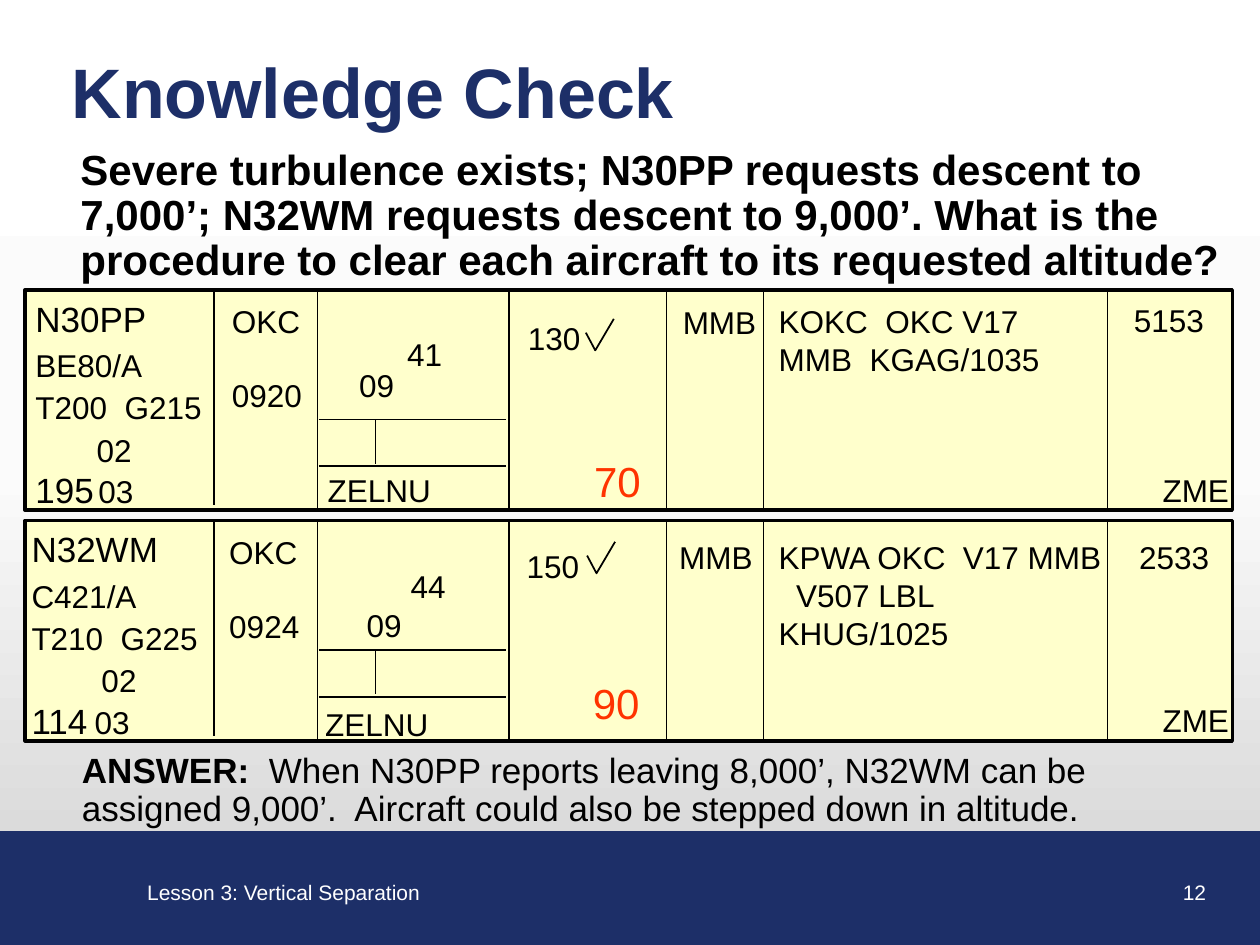
"""Build the Knowledge Check slide with two flight progress strips."""
from copy import deepcopy
from dataclasses import dataclass
from typing import NamedTuple

from lxml import etree
from pptx import Presentation
from pptx.dml.color import RGBColor
from pptx.enum import text as t
from pptx.enum.shapes import MSO_CONNECTOR, MSO_SHAPE
from pptx.oxml import ns
from pptx.util import Pt

NAVY = RGBColor(0x1D, 0x2F, 0x68)
WHITE = RGBColor(0xFF, 0xFF, 0xFF)
BLACK = RGBColor(0, 0, 0)
STRIP_YELLOW = RGBColor(0xFF, 0xFF, 0xCC)
ALTITUDE_RED = RGBColor(0xFF, 0x33, 0x00)
BACKDROP = ((0, WHITE), (0.5, RGBColor(0xFB, 0xFB, 0xFB)), (1, RGBColor(0xD0, 0xD0, 0xD0)))

LEFT, CENTER, RIGHT = t.PP_ALIGN.LEFT, t.PP_ALIGN.CENTER, t.PP_ALIGN.RIGHT
STRIP_LEFT, STRIP_WIDTH, STRIP_HEIGHT = 14.4, 689.8, 126
STRIP_RULES = (
    (122.4, 0, 122.4, 123),
    *((x, 0, x, 125) for x in (181.4, 290.9, 380.9, 436.3, 632.9)),
    (182.2, 74.2, 289.4, 74.2),
    (182.2, 100.8, 289.4, 100.8),
    (214.6, 74.2, 214.6, 99.4),
)
CHECK_MARK = ((0, 7.9), (5.4, 18), (16, 0))


class Run(NamedTuple):
    text: str
    size: float | None = None
    bold: bool | None = None


class Line(NamedTuple):
    runs: tuple[Run, ...]
    before: float = 0
    indent: float = 0
    tab: float = 0


@dataclass(frozen=True)
class Field:
    lines: tuple[Line, ...]
    left: float
    down: float
    width: float
    height: float = 28.8
    size: float = 18
    color: RGBColor = BLACK
    align: t.PP_ALIGN = LEFT


@dataclass(frozen=True)
class Strip:
    top: float
    check: tuple[float, float]
    fields: tuple[Field, ...]


def line(text: str, before: float = 0, indent: float = 0) -> Line:
    return Line((Run(text),), before, indent)


def aircraft(callsign, kind, speeds, sector, number, strip_no, indent, tab) -> tuple[Line, ...]:
    return (
        Line((Run(callsign, 20),)),
        line(kind, 4),
        line(speeds, 2.5),
        line(sector, 2.5, indent),
        Line((Run(number, 20), Run("\t" + strip_no)), tab=tab),
    )


def departure(fix: str, time: str) -> tuple[Line, ...]:
    return line(fix), line(time, 20.7)


def write(shape, lines, *, size=18, color=BLACK, bold=False, align=LEFT,
          inset=(7.2, 3.6), spacing=1.0, wrap=True, anchor=t.MSO_ANCHOR.TOP) -> None:
    frame = shape.text_frame
    frame.word_wrap = wrap
    frame.auto_size = t.MSO_AUTO_SIZE.NONE
    frame.vertical_anchor = anchor
    frame.margin_left = frame.margin_right = Pt(inset[0])
    frame.margin_top = frame.margin_bottom = Pt(inset[1])
    for index, item in enumerate(lines):
        paragraph = frame.paragraphs[0] if index == 0 else frame.add_paragraph()
        properties = paragraph._p.get_or_add_pPr()
        properties.set("marL", str(Pt(item.indent)))
        properties.set("indent", "0")
        etree.SubElement(properties, ns.qn("a:buNone"))
        if item.tab:
            stops = etree.SubElement(properties, ns.qn("a:tabLst"))
            etree.SubElement(stops, ns.qn("a:tab"), pos=str(Pt(item.tab)), algn="l")
        paragraph.alignment = align
        paragraph.line_spacing = spacing
        paragraph.space_before = Pt(item.before)
        for part in item.runs:
            run = paragraph.add_run()
            run.text = part.text
            run.font.name = "Arial"
            run.font.size = Pt(part.size or size)
            run.font.bold = bold if part.bold is None else part.bold
            run.font.color.rgb = color


def place(shape, left: float, top: float, width: float, height: float):
    shape.left, shape.top, shape.width, shape.height = map(Pt, (left, top, width, height))
    return shape


def add_text(slide, box, lines, **style) -> None:
    write(slide.shapes.add_textbox(*map(Pt, box)), lines, **style)


def add_panel(slide, box, fill: RGBColor, outline: RGBColor, weight: float) -> None:
    panel = slide.shapes.add_shape(MSO_SHAPE.RECTANGLE, *map(Pt, box))
    panel.shadow.inherit = False
    panel.fill.solid()
    panel.fill.fore_color.rgb = fill
    panel.line.color.rgb = outline
    panel.line.width = Pt(weight)


def add_rule(slide, x1: float, y1: float, x2: float, y2: float) -> None:
    rule = slide.shapes.add_connector(MSO_CONNECTOR.STRAIGHT, *map(Pt, (x1, y1, x2, y2)))
    rule.line.color.rgb = BLACK
    rule.line.width = Pt(1)
    etree.SubElement(rule._element.spPr, ns.qn("a:effectLst"))


def add_check(slide, left: float, top: float) -> None:
    corners = [(Pt(left + x), Pt(top + y)) for x, y in CHECK_MARK]
    builder = slide.shapes.build_freeform(*corners[0])
    builder.add_line_segments(corners[1:], close=False)
    check = builder.convert_to_shape()
    check.shadow.inherit = False
    check.fill.background()
    check.line.color.rgb = BLACK
    check.line.width = Pt(1)


def add_strip(slide, strip: Strip) -> None:
    add_panel(slide, (STRIP_LEFT, strip.top, STRIP_WIDTH, STRIP_HEIGHT), STRIP_YELLOW, BLACK, 2)
    for x1, y1, x2, y2 in STRIP_RULES:
        add_rule(slide, x1, strip.top + y1, x2, strip.top + y2)
    for field in strip.fields:
        add_text(slide, (field.left, strip.top + field.down, field.width, field.height), field.lines,
                 size=field.size, color=field.color, align=field.align, inset=(3.6, 3.6))
    add_check(slide, strip.check[0], strip.top + strip.check[1])


def paint_background(slide) -> None:
    fill = slide.background.fill
    fill.gradient()
    fill.gradient_angle = 270
    stops = slide.element.find(".//" + ns.qn("a:gsLst"))
    stops.append(deepcopy(stops[-1]))
    for stop, (position, color) in zip(fill.gradient_stops, BACKDROP):
        stop.position = position
        stop.color.rgb = color


STRIPS = (
    Strip(165.6, (334.8, 16.6), (
        Field(aircraft("N30PP", "BE80/A", "T200  G215", "02", "195", "03", 35, 68.4), 16.6, 0.7, 105.8, 123),
        Field(departure("OKC", "0920"), 128.9, 3.6, 62, 67.7),
        Field((line("09"),), 201.6, 40.3, 31),
        Field((line("41"),), 229, 22.3, 51.8),
        Field((line("ZELNU"),), 183.6, 100, 82.8),
        Field((line("130"),), 298, 13, 44.6),
        Field((line("MMB"),), 386.6, 4.3, 60.5),
        Field((line("KOKC  OKC V17"), line("MMB  KGAG/1035")), 441.4, 3.6, 189.4, 51),
        Field((line("5153"),), 644.4, 2.9, 67),
        Field((line("ZME"),), 646.6, 100, 73.4, align=CENTER),
        Field((line("70"),), 321.8, 91.4, 62, size=24, color=ALTITUDE_RED, align=CENTER))),
    Strip(297.4, (335.5, 12.2), (
        Field(aircraft("N32WM", "C421/A", "T210  G225", "02", "114", "03", 40, 67), 14.4, 0.7, 106.6, 114.5),
        Field(departure("OKC", "0924"), 127.4, 3.6, 62, 67.7),
        Field((line("09"),), 205.9, 45.4, 31),
        Field((line("44"),), 231.1, 23, 53.3),
        Field((line("ZELNU"),), 182.2, 102.2, 80.6),
        Field((line("150"),), 297.4, 11.5, 41),
        Field((line("MMB"),), 384.5, 6.5, 62.6),
        Field((line("KPWA OKC  V17 MMB"), line("V507 LBL", indent=10), line("KHUG/1025")), 441.4, 6.5, 194.4, 72),
        Field((line("2533"),), 647.3, 6.5, 64),
        Field((line("ZME"),), 646.6, 99.4, 73.4, align=CENTER),
        Field((line("90"),), 326.2, 86.4, 51.8, size=24, color=ALTITUDE_RED, align=CENTER))),
)
QUESTION = ("Severe turbulence exists; N30PP requests descent to 7,000’; N32WM requests descent to 9,000’. "
            "What is the procedure to clear each aircraft to its requested altitude?")
ANSWER = Line((Run("ANSWER:  ", bold=True), Run(
    "When N30PP reports leaving 8,000’, N32WM can be assigned 9,000’.  "
    "Aircraft could also be stepped down in altitude.")))


def main() -> None:
    deck = Presentation()
    deck.slide_width, deck.slide_height = Pt(720), Pt(540)
    slide = deck.slides.add_slide(deck.slide_layouts[1])
    paint_background(slide)
    write(place(slide.shapes.title, 33.8, 27.4, 667.4, 48.2), (line("Knowledge Check"),),
          size=40, color=NAVY, bold=True, anchor=t.MSO_ANCHOR.MIDDLE)
    write(place(slide.placeholders[1], 33.8, 78.5, 677.5, 91.4), (line(QUESTION),),
          size=24, bold=True, inset=(12.2, 6.5), spacing=0.9)
    add_panel(slide, (-1.4, 475.2, 721.4, 64.8), NAVY, NAVY, 0.75)
    add_text(slide, (77, 499, 149.8, 21.6), (line("Lesson 3: Vertical Separation"),),
             size=12, color=WHITE, wrap=False)
    add_text(slide, (546.5, 499, 149.8, 21.6), (line("12"),), size=12, color=WHITE, align=RIGHT)
    for strip in STRIPS:
        add_strip(slide, strip)
    add_text(slide, (34.6, 424.1, 642.2, 80.6), (ANSWER,), size=20, inset=(12.2, 6.5), spacing=0.9)
    deck.save("out.pptx")


if __name__ == "__main__":
    main()
